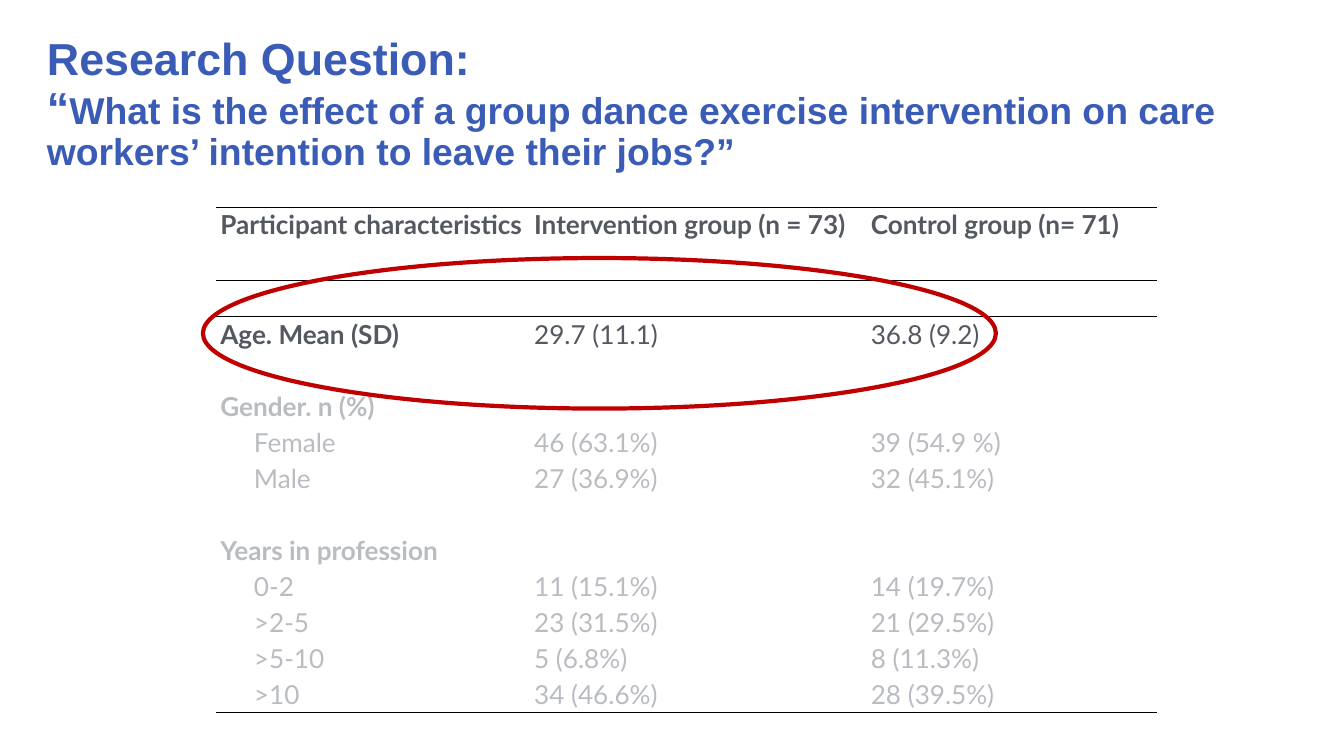
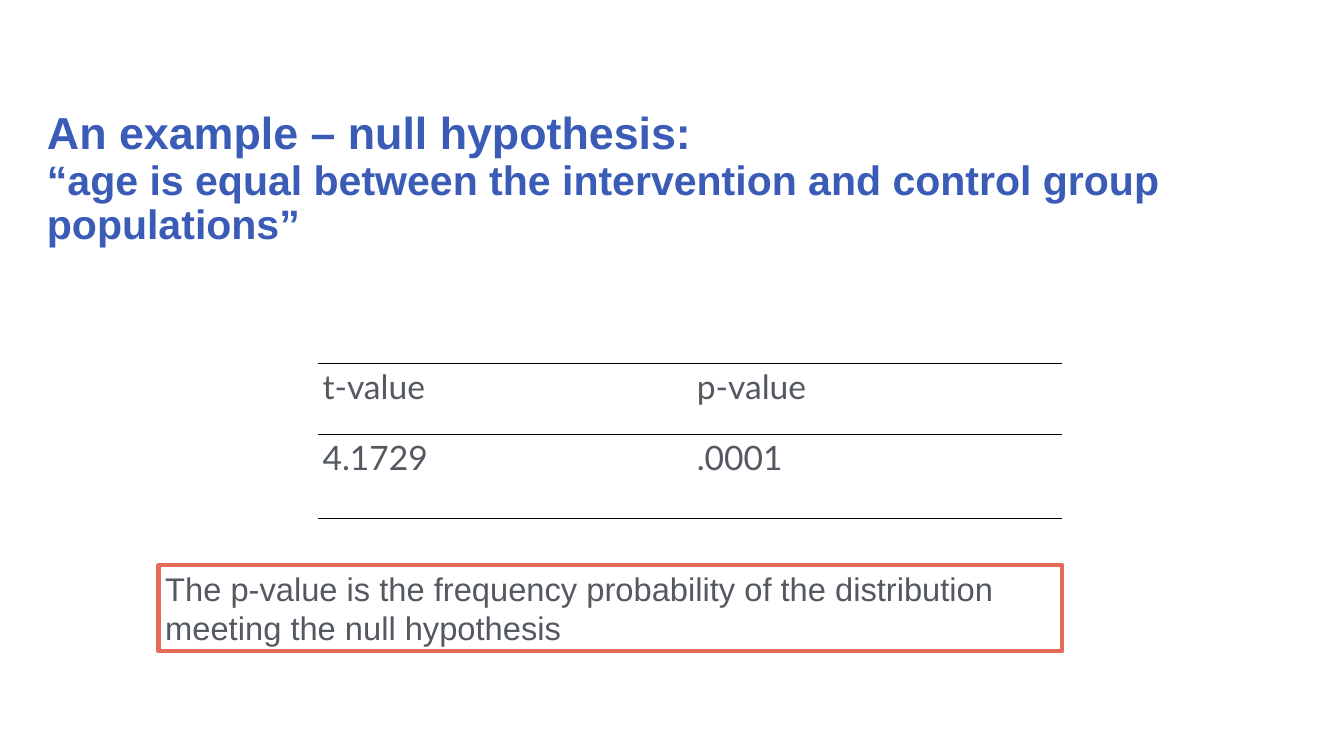
from lxml.etree import SubElement as Sub
from pptx import Presentation
from pptx.dml.color import RGBColor as RGB
from pptx.enum.shapes import MSO_SHAPE as Kind
from pptx.enum.text import MSO_ANCHOR as Anchor, PP_ALIGN as Align
from pptx.oxml.ns import qn
from pptx.util import Inches, Pt

BLUE = RGB(0x3A, 0x5C, 0xB7)
DARK = RGB(0x54, 0x58, 0x60)
PALE = RGB(0xB9, 0xBC, 0xC1)
RED = RGB(0xC0, 0x00, 0x00)
CORAL = RGB(0xE5, 0x6B, 0x59)
HEAD = "Arial"
BODY = "Lato"
PLAIN = "{2D5ABB26-0587-4C30-8999-92F81FD0307C}"

GROUPS = [
    ("Participant characteristics", "Intervention group (n = 73)", "Control group (n= 71)"),
    ("", "", ""),
    ("Age. Mean (SD)", "29.7 (11.1)", "36.8 (9.2)"),
    ("", "", ""),
    ("Gender. n (%)", "", ""),
    ("Female", "46 (63.1%)", "39 (54.9 %)"),
    ("Male", "27 (36.9%)", "32 (45.1%)"),
    ("", "", ""),
    ("Years in profession", "", ""),
    ("0-2", "11 (15.1%)", "14 (19.7%)"),
    (">2-5", "23 (31.5%)", "21 (29.5%)"),
    (">5-10", "5 (6.8%)", "8 (11.3%)"),
    (">10", "34 (46.6%)", "28 (39.5%)"),
]
PALE_FROM = 4
TEST = [("t-value", "p-value"), ("4.1729", ".0001")]


def style(font, name, size, color, bold=False):
    font.name = name
    font.size = Pt(size)
    font.color.rgb = color
    font.bold = bold


def add_title(slide, top, height, head, *parts):
    box = slide.shapes.add_textbox(Inches(0.6), Inches(top), Inches(18.81), Inches(height))
    frame = box.text_frame
    frame.word_wrap = True
    frame.vertical_anchor = Anchor.MIDDLE
    frame.text = head
    para = frame.paragraphs[0]
    para.line_spacing = 0.9
    style(para.runs[0].font, HEAD, 48, BLUE, True)
    para.add_line_break()
    for text, size in parts:
        run = para.add_run()
        run.text = text
        style(run.font, HEAD, size, BLUE, True)


def add_rule(cell, side):
    line = Sub(cell._tc.get_or_add_tcPr(), qn("a:" + side), w=str(Pt(1)))
    fill = Sub(line, qn("a:solidFill"))
    Sub(fill, qn("a:srgbClr"), val="000000")


def fill_cell(cell, text, size, color, bold, indent):
    cell.margin_left = cell.margin_right = Inches(0.07)
    cell.margin_top = cell.margin_bottom = 0
    cell.fill.background()
    if not text:
        return
    cell.text_frame.text = text
    para = cell.text_frame.paragraphs[0]
    para.line_spacing = 1.07
    para.space_after = Pt(8)
    if indent:
        para._p.get_or_add_pPr().set("marL", str(Inches(0.5)))
    style(para.runs[0].font, BODY, size, color, bold)


def add_grid(slide, left, top, cols, tall, rows, size, look):
    frame = slide.shapes.add_table(len(rows), len(cols), Inches(left), Inches(top),
                                   Inches(sum(cols)), Inches(sum(tall)))
    table = frame.table
    table.first_row = table.horz_banding = False
    table._tbl.tblPr.find(qn("a:tableStyleId")).text = PLAIN
    for col, width in zip(table.columns, cols):
        col.width = Inches(width)
    for r, row in enumerate(rows):
        table.rows[r].height = Inches(tall[r])
        for c, text in enumerate(row):
            cell = table.cell(r, c)
            if r < 2:
                add_rule(cell, "lnT")
            if r in (0, len(rows) - 1):
                add_rule(cell, "lnB")
            fill_cell(cell, text, size, *look(r, c))


def group_look(r, c):
    sub = c == 0 and r > PALE_FROM and GROUPS[r][1] != ""
    bold = r == 0 or (c == 0 and not sub)
    return PALE if r >= PALE_FROM else DARK, bold, sub


def test_look(r, c):
    return DARK, False, False


def add_frame(slide, kind, left, top, width, height, color):
    shape = slide.shapes.add_shape(kind, Inches(left), Inches(top), Inches(width), Inches(height))
    shape.shadow.inherit = False
    shape.fill.background()
    shape.line.color.rgb = color
    shape.line.width = Pt(4.5)
    return shape


def add_note(slide, text):
    shape = add_frame(slide, Kind.RECTANGLE, 2.36, 8.41, 13.45, 1.28, CORAL)
    frame = shape.text_frame
    frame.word_wrap = True
    frame.vertical_anchor = Anchor.TOP
    frame.text = text
    para = frame.paragraphs[0]
    para.alignment = Align.LEFT
    style(para.runs[0].font, HEAD, 35, DARK)


def main():
    deck = Presentation()
    deck.slide_width = Inches(20)
    deck.slide_height = Inches(11.25)
    blank = deck.slide_layouts[6]

    slide = deck.slides.add_slide(blank)
    add_title(slide, 0, 3.14, "Research Question:", ("“", 48),
              ("What is the effect of a group dance exercise intervention on care "
               "workers’ intention to leave their jobs?”", 40))
    count = len(GROUPS) - 1
    tall = [1.09] + [(7.52 - 1.09) / count] * count
    add_grid(slide, 3.21, 3.08, [4.67, 5.01, 4.33], tall, GROUPS, 28, group_look)
    add_frame(slide, Kind.OVAL, 3.02, 3.84, 11.8, 2.24, RED)

    slide = deck.slides.add_slide(blank)
    add_title(slide, 1.59, 2.17, "An example – null hypothesis:",
              ("“age is equal between the intervention and control group populations”", 44))
    add_grid(slide, 4.73, 5.41, [5.57, 5.51], [1.05, 1.25], TEST, 36, test_look)
    add_note(slide, "The p-value is the frequency probability of the distribution "
                    "meeting the null hypothesis")

    deck.save("out.pptx")


if __name__ == "__main__":
    main()
